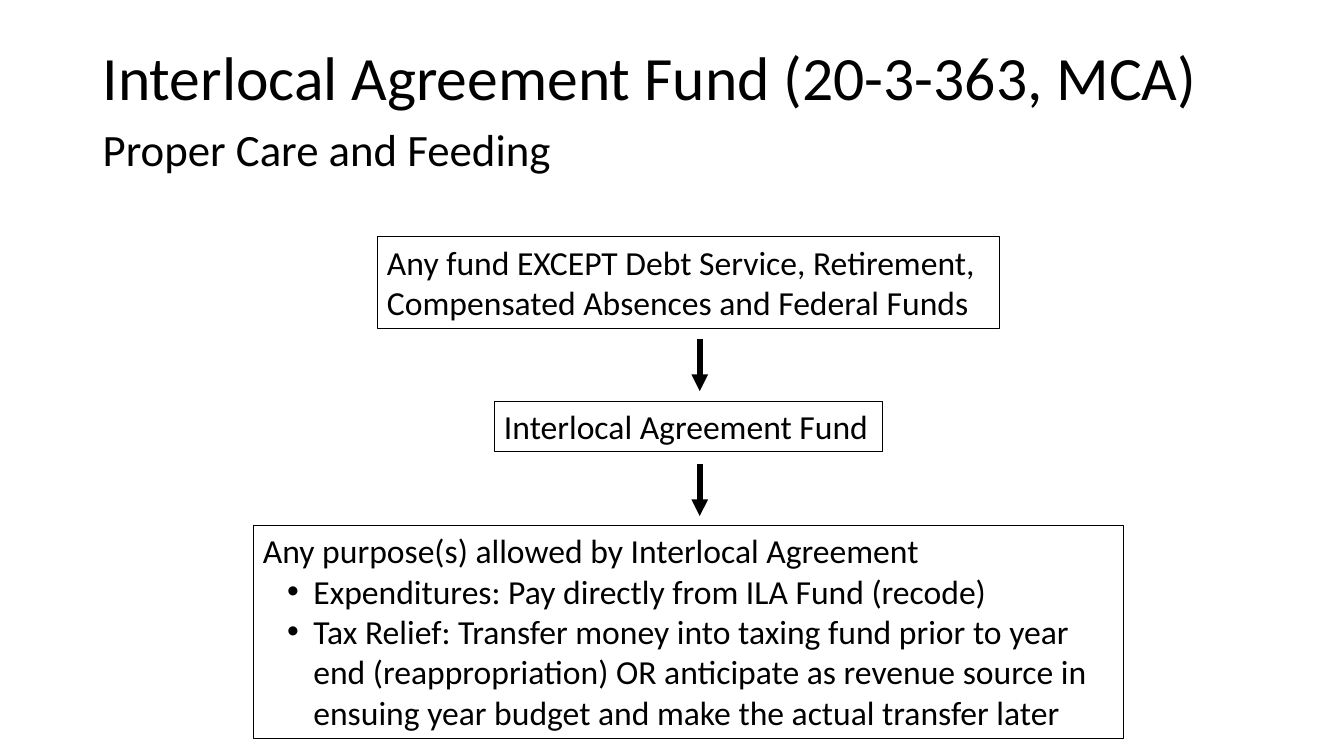
"""Build the Interlocal Agreement Fund flow slide."""
from dataclasses import dataclass

import pptx
import pptx.dml.color
import pptx.enum.shapes
import pptx.enum.text
import pptx.oxml
import pptx.oxml.ns
import pptx.util
from lxml import etree
from pptx.util import Inches


@dataclass(frozen=True)
class Theme:
    """Colours, font and sizes of the slide."""
    ink: pptx.dml.color.RGBColor = pptx.dml.color.RGBColor(0, 0, 0)
    font: str = "Calibri"
    title: int = 44
    subtitle: int = 32
    body: int = 24
    border: float = 0.75
    arrow: float = 4


THEME = Theme()


def style_paragraph(paragraph, text, size):
    """Fill a paragraph with left-aligned text in the theme font."""
    paragraph.text = text
    paragraph.alignment = pptx.enum.text.PP_ALIGN.LEFT
    paragraph.font.name = THEME.font
    paragraph.font.size = pptx.util.Pt(size)
    paragraph.font.color.rgb = THEME.ink


def add_bullet(paragraph):
    """Give a paragraph a hanging bullet."""
    properties = paragraph._p.get_or_add_pPr()
    properties.set("marL", str(Inches(0.5)))
    properties.set("indent", str(Inches(-0.26)))
    font = etree.SubElement(properties, pptx.oxml.ns.qn("a:buFont"))
    font.set("typeface", "Arial")
    bullet = etree.SubElement(properties, pptx.oxml.ns.qn("a:buChar"))
    bullet.set("char", "•")


def add_heading(slide, title, subtitle):
    """Add the title with its smaller second line."""
    heading = slide.shapes.add_textbox(Inches(0.92), Inches(0.38), Inches(11.5), Inches(1.45))
    frame = heading.text_frame
    frame.word_wrap = True
    frame.vertical_anchor = pptx.enum.text.MSO_ANCHOR.MIDDLE
    style_paragraph(frame.paragraphs[0], title, THEME.title)
    second_line = frame.add_paragraph()
    style_paragraph(second_line, subtitle, THEME.subtitle)
    second_line.space_before = pptx.util.Pt(10)
    for paragraph in frame.paragraphs:
        paragraph.line_spacing = 0.9


def add_step(slide, left, top, width, height, lines, bullets=()):
    """Add an outlined box with plain lines followed by bullets."""
    step = slide.shapes.add_shape(
        pptx.enum.shapes.MSO_SHAPE.RECTANGLE,
        Inches(left), Inches(top), Inches(width), Inches(height))
    step.shadow.inherit = False
    step.fill.background()
    step.line.color.rgb = THEME.ink
    step.line.width = pptx.util.Pt(THEME.border)
    frame = step.text_frame
    frame.word_wrap = True
    frame.vertical_anchor = pptx.enum.text.MSO_ANCHOR.TOP
    for index, text in enumerate([*lines, *bullets]):
        paragraph = frame.add_paragraph() if index else frame.paragraphs[0]
        style_paragraph(paragraph, text, THEME.body)
        if index >= len(lines):
            add_bullet(paragraph)


def add_arrow(slide, top):
    """Add a short downward arrow between two steps."""
    x = Inches(6.94)
    arrow = slide.shapes.add_connector(
        pptx.enum.shapes.MSO_CONNECTOR.STRAIGHT, x, Inches(top), x, Inches(top + 0.52))
    arrow.line.color.rgb = THEME.ink
    arrow.line.width = pptx.util.Pt(THEME.arrow)
    head = etree.SubElement(arrow.line._get_or_add_ln(), pptx.oxml.ns.qn("a:tailEnd"))
    head.set("type", "triangle")
    etree.SubElement(arrow._element.spPr, pptx.oxml.ns.qn("a:effectLst"))


def main():
    """Build and save the slide."""
    deck = pptx.Presentation()
    deck.slide_width, deck.slide_height = Inches(13.33), Inches(7.5)
    slide = deck.slides.add_slide(deck.slide_layouts[6])
    add_heading(slide, "Interlocal Agreement Fund (20-3-363, MCA)", "Proper Care and Feeding")
    add_step(slide, 3.74, 2.35, 6.17, 0.91, [
        "Any fund EXCEPT Debt Service, Retirement,",
        "Compensated Absences and Federal Funds",
    ])
    add_step(slide, 4.9, 3.98, 3.85, 0.5, ["Interlocal Agreement Fund"])
    add_step(slide, 2.51, 5.21, 8.63, 2.12, ["Any purpose(s) allowed by Interlocal Agreement"], [
        "Expenditures: Pay directly from ILA Fund (recode)",
        "Tax Relief: Transfer money into taxing fund prior to year end (reappropriation) "
        "OR anticipate as revenue source in ensuing year budget and make the actual "
        "transfer later",
    ])
    for top in (3.36, 4.6):
        add_arrow(slide, top)
    deck.save("out.pptx")


if __name__ == "__main__":
    main()
